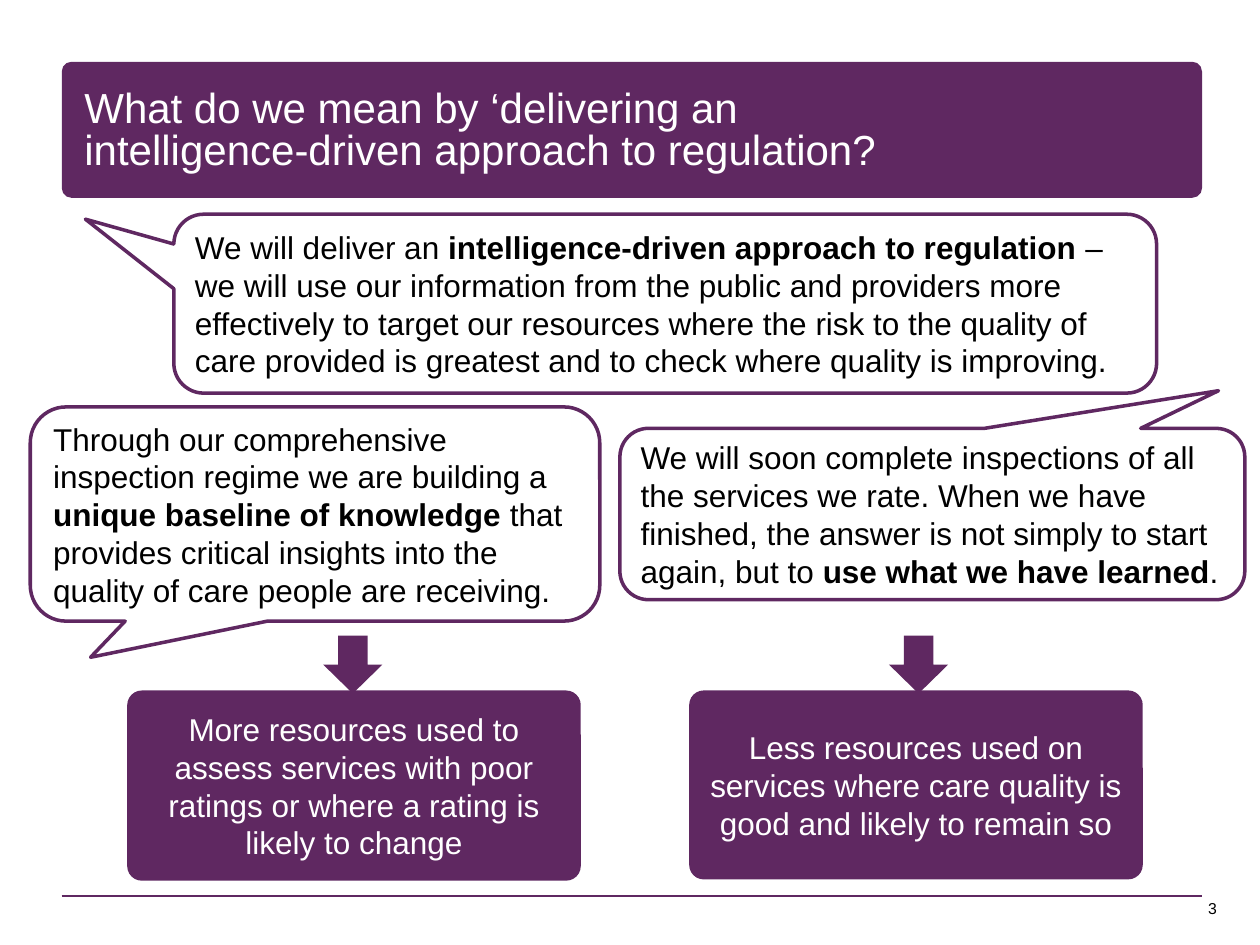
from pptx import Presentation
from pptx.dml.color import RGBColor
from pptx.enum.shapes import MSO_CONNECTOR as CONN, MSO_SHAPE as SHAPE
from pptx.enum.text import MSO_ANCHOR as ANCHOR, PP_ALIGN as ALIGN
from pptx.oxml.ns import qn
from pptx.util import Inches, Pt
from lxml import etree

COLORS = {"plum": "5F2861", "white": "FFFFFF", "black": "000000"}
COLUMNS, ROWS = 100, 75


class Deck:
    font = "Arial"
    body_size = 18

    def __init__(self):
        self.prs = Presentation()
        self.prs.slide_width, self.prs.slide_height = Inches(10), Inches(7.5)
        self.s = self.prs.slides.add_slide(self.prs.slide_layouts[6])

    def color(self, name):
        return RGBColor.from_string(COLORS[name])

    def grid(self, x, y):
        return (round(self.prs.slide_width * x / COLUMNS),
                round(self.prs.slide_height * y / ROWS))

    def add_runs(self, tf, parts, size, color, align=ALIGN.LEFT):
        p = tf.paragraphs[0]
        p.alignment = align
        for i, part in enumerate(parts):
            r = p.add_run()
            r.text = part
            r.font.name, r.font.size = self.font, Pt(size)
            r.font.bold = i % 2 == 1
            r.font.color.rgb = self.color(color)
        return p

    def shape(self, kind, x, y, w, h, adjustments=()):
        sp = self.s.shapes.add_shape(kind, *self.grid(x, y), *self.grid(w, h))
        sp.shadow.inherit = False
        for i, value in enumerate(adjustments):
            sp.adjustments[i] = value
        sp.text_frame.word_wrap = True
        sp.text_frame.vertical_anchor = ANCHOR.MIDDLE
        return sp

    def panel(self, kind, x, y, w, h, adjustments=()):
        sp = self.shape(kind, x, y, w, h, adjustments)
        sp.fill.solid()
        sp.fill.fore_color.rgb = self.color("plum")
        sp.line.fill.background()
        return sp

    def outcome(self, x, y, w, h, text):
        sp = self.panel(SHAPE.ROUNDED_RECTANGLE, x, y, w, h, [0.077])
        self.add_runs(sp.text_frame, [text], self.body_size, "white", ALIGN.CENTER)

    def callout(self, x, y, w, h, tip, parts):
        sp = self.shape(SHAPE.ROUNDED_RECTANGULAR_CALLOUT, x, y, w, h, [*tip, 0.167])
        sp.fill.background()
        sp.line.color.rgb = self.color("plum")
        sp.line.width = Pt(2)
        self.add_runs(sp.text_frame, parts, self.body_size, "black")

    def arrow(self, x, y, w, h):
        self.panel(SHAPE.RIGHT_ARROW, x, y, w, h).rotation = 90

    def rule(self, x1, x2, y):
        line = self.s.shapes.add_connector(
            CONN.STRAIGHT, *self.grid(x1, y), *self.grid(x2, y))
        line.line.color.rgb = self.color("plum")
        line.line.width = Pt(1)
        etree.SubElement(line._element.spPr, qn("a:effectLst"))

    def text(self, x, y, w, h, text, size, color, wrap=True):
        tf = self.s.shapes.add_textbox(*self.grid(x, y), *self.grid(w, h)).text_frame
        tf.word_wrap = wrap
        return tf, self.add_runs(tf, [text], size, color)

    def title(self, x, y, w, h, text):
        tf, p = self.text(x, y, w, h, text, 24, "white")
        tf.vertical_anchor = ANCHOR.MIDDLE
        tf.margin_left = tf.margin_right = tf.margin_top = tf.margin_bottom = 0
        p.line_spacing = 0.85


def main():
    deck = Deck()
    deck.panel(SHAPE.ROUNDED_RECTANGLE, 4.9, 4.9, 90.5, 10.8, [0.072])
    deck.rule(4.9, 95.4, 71.1)
    deck.title(6.7, 5.5, 65.4, 9.9,
               "What do we mean by ‘delivering an intelligence-driven approach to regulation?")
    deck.text(94.9, 70.8, 2.7, 2.5, "3", 9, "black", wrap=False)

    deck.callout(13.8, 17, 78, 14.2, (-0.59, -0.472), [
        "We will deliver an ",
        "intelligence-driven approach to regulation ",
        "– we will use our information from the public and providers more effectively "
        "to target our resources where the risk to the quality of care provided is "
        "greatest and to check where quality is improving."])
    deck.callout(2.4, 32.3, 45.2, 17, (-0.394, 0.669), [
        "Through our comprehensive inspection regime we are building a ",
        "unique baseline of knowledge ",
        "that provides critical insights into the quality of care people are receiving."])
    deck.callout(49.2, 34, 49.6, 13.6, (0.458, -0.72), [
        "We will soon complete inspections of all the services we rate. When we have "
        "finished, the answer is not simply to start again, but to ",
        "use what we have learned",
        "."])

    outcomes = [
        (10.1, 25.7, 15.1, "More resources used to assess services with poor ratings "
                           "or where a rating is likely to change"),
        (54.7, 70.6, 15, "Less resources used on services where care quality is good "
                         "and likely to remain so"),
    ]
    for box_x, arrow_x, height, text in outcomes:
        deck.outcome(box_x, 54.8, 36, height, text)
        deck.arrow(arrow_x, 50.4, 4.6, 4.7)

    deck.prs.save("out.pptx")


if __name__ == "__main__":
    main()
